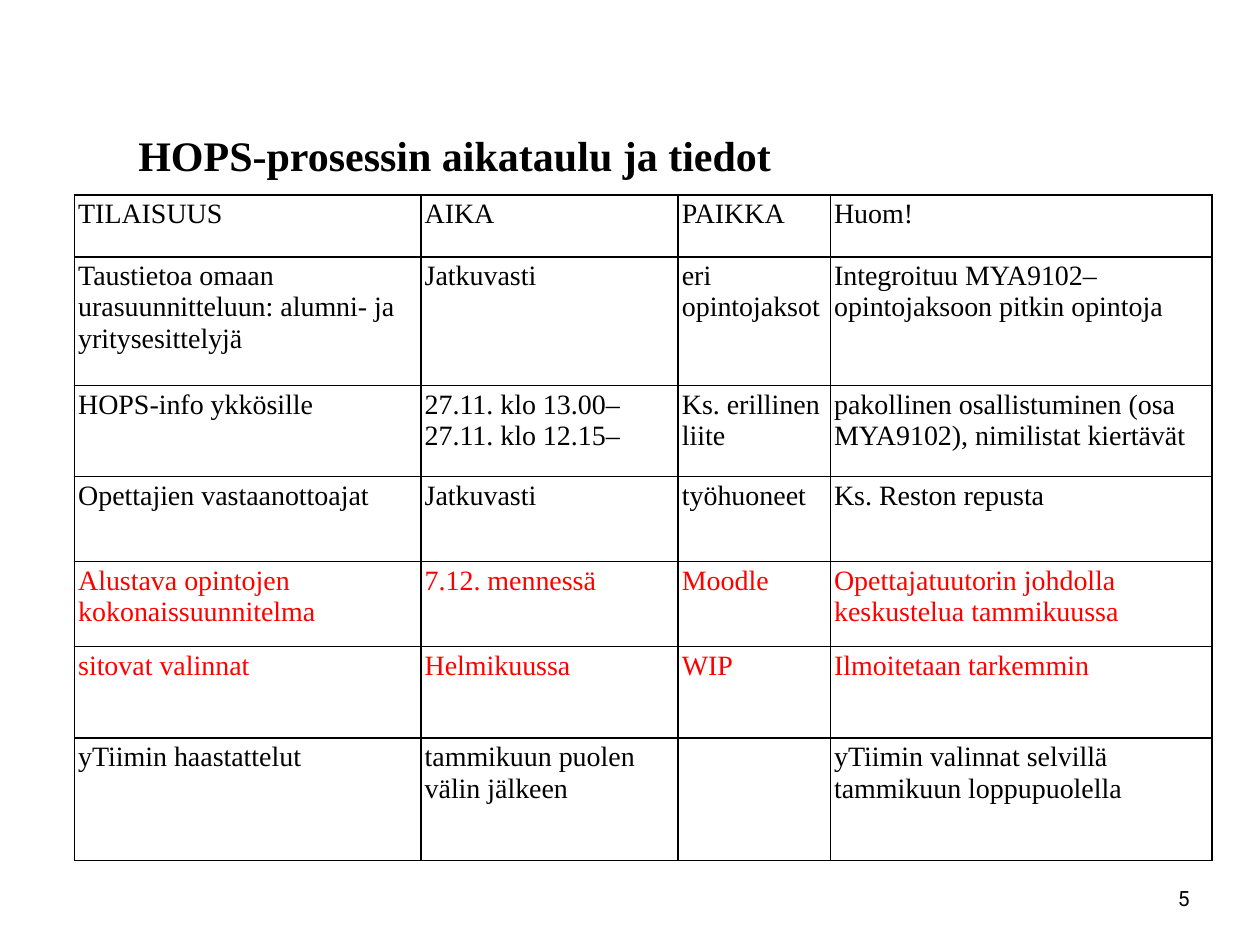
from lxml import etree
from pptx import Presentation
from pptx.dml.color import RGBColor
from pptx.enum.text import MSO_ANCHOR
from pptx.oxml.ns import qn
from pptx.util import Pt

TOP, MIDDLE = MSO_ANCHOR.TOP, MSO_ANCHOR.MIDDLE
BLACK = RGBColor(0x00, 0x00, 0x00)
RED = RGBColor(0xFF, 0x00, 0x00)
SERIF, SANS = "Times New Roman", "Roboto"

COLUMN_WIDTHS = [198, 147, 87, 218]
# Row height, text colour, cell texts
SCHEDULE = [
    (35.5, BLACK, ["TILAISUUS", "AIKA", "PAIKKA", "Huom!"]),
    (73.5, BLACK, ["Taustietoa omaan urasuunnitteluun: alumni- ja yritysesittelyjä",
                   "Jatkuvasti", "eri opintojaksot",
                   "Integroituu MYA9102–opintojaksoon pitkin opintoja"]),
    (52, BLACK, ["HOPS-info ykkösille", "27.11. klo 13.00–\n27.11. klo 12.15–",
                 "Ks. erillinen liite",
                 "pakollinen osallistuminen (osa MYA9102), nimilistat kiertävät"]),
    (48.5, BLACK, ["Opettajien vastaanottoajat", "Jatkuvasti", "työhuoneet",
                   "Ks. Reston repusta"]),
    (48.5, RED, ["Alustava opintojen kokonaissuunnitelma", "7.12. mennessä", "Moodle",
                 "Opettajatuutorin johdolla keskustelua tammikuussa"]),
    (52.5, RED, ["sitovat valinnat", "Helmikuussa", "WIP", "Ilmoitetaan tarkemmin"]),
    (70, BLACK, ["yTiimin haastattelut", "tammikuun puolen välin jälkeen", "",
                 "yTiimin valinnat selvillä tammikuun loppupuolella"]),
]


def write(tf, text, font, size, color=BLACK, bold=False):
    """Fill a text frame with one paragraph per line of text."""
    for i, line in enumerate(text.split("\n")):
        p = tf.add_paragraph() if i else tf.paragraphs[0]
        p.font.size = Pt(size)
        if not line:
            continue
        r = p.add_run()
        r.text = line
        r.font.name = font
        r.font.size = Pt(size)
        r.font.bold = bold
        r.font.color.rgb = color


def add_text(s, box, text, font, size, anchor=TOP, bold=False):
    tf = s.shapes.add_textbox(*map(Pt, box)).text_frame
    tf.word_wrap = True
    tf.vertical_anchor = anchor
    write(tf, text, font, size, bold=bold)


def add_borders(cell):
    tc_pr = cell._tc.get_or_add_tcPr()
    for side in ("lnL", "lnR", "lnT", "lnB"):
        ln = etree.SubElement(tc_pr, qn(f"a:{side}"), w=str(Pt(1)))
        fill = etree.SubElement(ln, qn("a:solidFill"))
        etree.SubElement(fill, qn("a:srgbClr"), val=str(BLACK))


def add_schedule(s, left, top):
    width = sum(COLUMN_WIDTHS)
    height = sum(row[0] for row in SCHEDULE)
    table = s.shapes.add_table(len(SCHEDULE), len(COLUMN_WIDTHS),
                               Pt(left), Pt(top), Pt(width), Pt(height)).table
    table.first_row = table.horz_banding = False
    for column, column_width in zip(table.columns, COLUMN_WIDTHS):
        column.width = Pt(column_width)
    for row, (row_height, color, texts) in zip(table.rows, SCHEDULE):
        row.height = Pt(row_height)
        for cell, text in zip(row.cells, texts):
            cell.margin_left = cell.margin_right = Pt(2.2)
            cell.margin_top = cell.margin_bottom = Pt(2.2)
            add_borders(cell)
            cell.fill.background()
            write(cell.text_frame, text, SERIF, 16, color)


def main():
    prs = Presentation()
    prs.slide_width, prs.slide_height = Pt(720), Pt(540)
    s = prs.slides.add_slide(prs.slide_layouts[6])
    add_text(s, (666, 502.5, 54, 39), "5", SANS, 12)
    add_text(s, (72, 43.2, 648, 90.7), "HOPS-prosessin aikataulu ja tiedot",
             SERIF, 24, MIDDLE, bold=True)
    add_schedule(s, 42.5, 111.4)
    prs.save("out.pptx")


if __name__ == "__main__":
    main()
